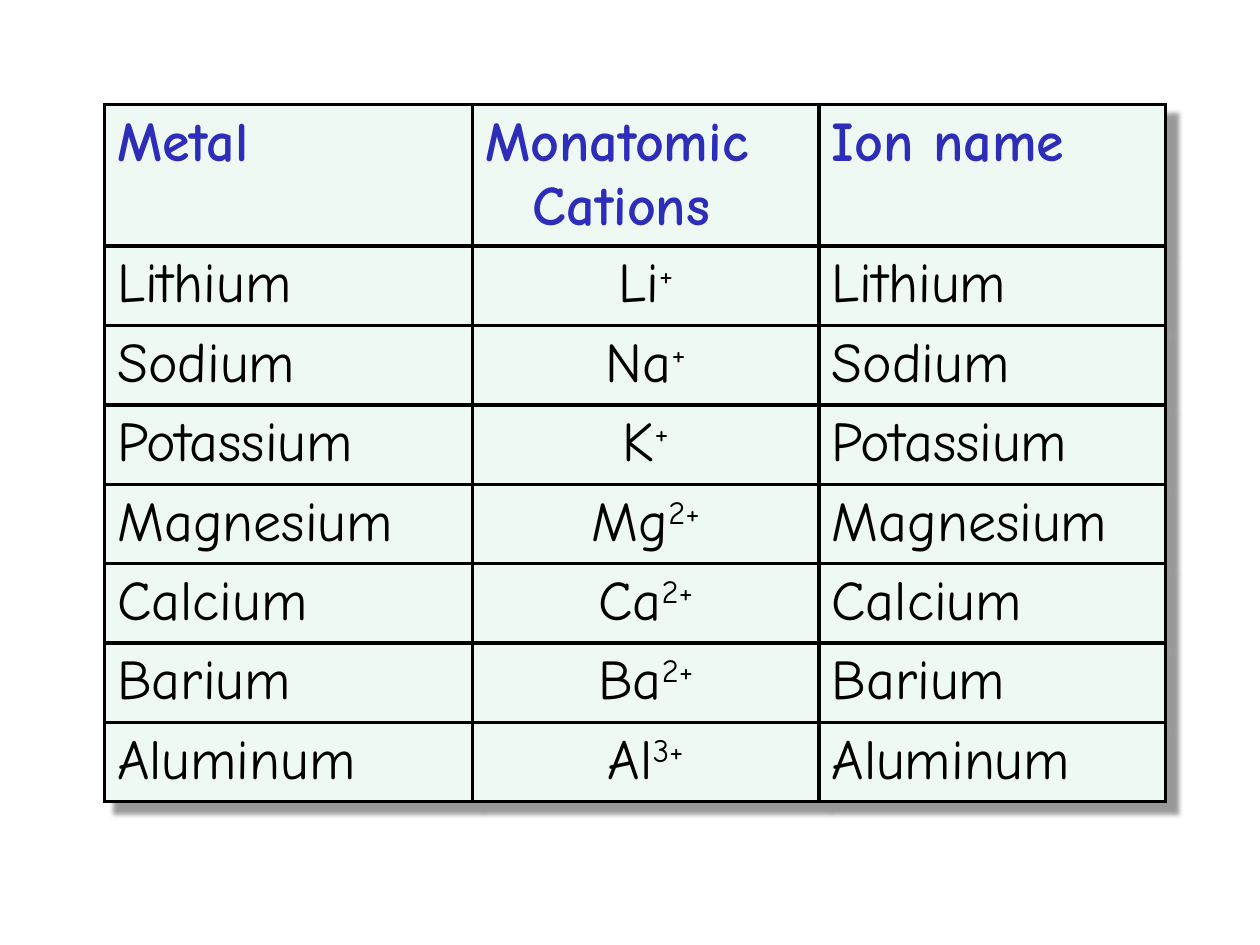
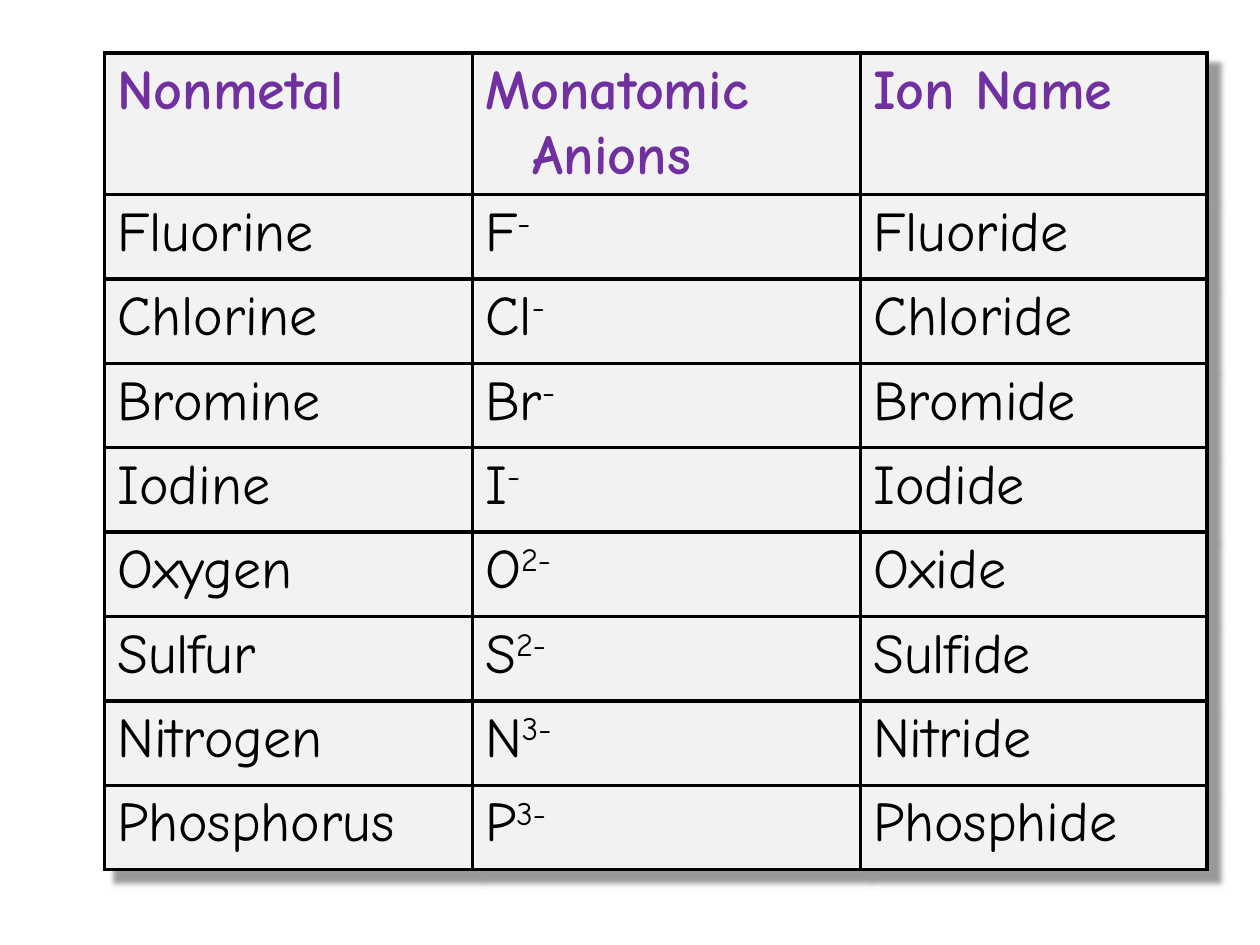
from dataclasses import dataclass

from lxml.etree import SubElement
from pptx import Presentation
from pptx.dml.color import RGBColor
from pptx.enum.text import PP_ALIGN
from pptx.oxml import parse_xml
from pptx.oxml.ns import nsdecls, qn
from pptx.util import Inches, Pt

SLIDES = [
    {
        "header": ("Metal", "Monatomic Cations", "Ion name"),
        "ions": [
            ("Lithium", "Li", "+", "Lithium"),
            ("Sodium", "Na", "+", "Sodium"),
            ("Potassium", "K", "+", "Potassium"),
            ("Magnesium", "Mg", "2+", "Magnesium"),
            ("Calcium", "Ca", "2+", "Calcium"),
            ("Barium", "Ba", "2+", "Barium"),
            ("Aluminum", "Al", "3+", "Aluminum"),
        ],
        "top": 0.83,
        "columns": (2.92, 2.75, 2.75),
        "row_height": 0.63,
        "ion_align": PP_ALIGN.CENTER,
        "header_color": "2D2DB9",
        "fill": "EEF9F4",
    },
    {
        "header": ("Nonmetal", "Monatomic Anions", "Ion Name"),
        "ions": [
            ("Fluorine", "F", "-", "Fluoride"),
            ("Chlorine", "Cl", "-", "Chloride"),
            ("Bromine", "Br", "-", "Bromide"),
            ("Iodine", "I", "-", "Iodide"),
            ("Oxygen", "O", "2-", "Oxide"),
            ("Sulfur", "S", "2-", "Sulfide"),
            ("Nitrogen", "N", "3-", "Nitride"),
            ("Phosphorus", "P", "3-", "Phosphide"),
        ],
        "top": 0.42,
        "columns": (2.92, 3.08, 2.75),
        "row_height": 0.67,
        "ion_align": PP_ALIGN.LEFT,
        "header_color": "7030A0",
        "fill": "F2F2F2",
    },
]


@dataclass(frozen=True)
class Theme:
    font: str = "Comic Neue"
    size: float = 32
    ink: str = "000000"
    border: float = 2.25
    left: float = 0.83
    header_height: float = 1.12
    indent: float = 0.38
    shadow_alpha: int = 40000
    shadow_blur: float = 0.04
    shadow_distance: float = 0.12


THEME = Theme()


def add_shadow(table):
    table._tbl.tblPr.insert(0, parse_xml(
        f'<a:effectLst {nsdecls("a")}>'
        f'<a:outerShdw blurRad="{Inches(THEME.shadow_blur)}" '
        f'dist="{Inches(THEME.shadow_distance)}" dir="2700000" '
        f'algn="tl" rotWithShape="0"><a:srgbClr val="{THEME.ink}">'
        f'<a:alpha val="{THEME.shadow_alpha}"/></a:srgbClr>'
        '</a:outerShdw></a:effectLst>'))


def style_cell(cell, fill):
    cell.fill.solid()
    cell.fill.fore_color.rgb = RGBColor.from_string(fill)
    tc_pr = cell._tc.get_or_add_tcPr()
    for i, side in enumerate(("lnL", "lnR", "lnT", "lnB")):
        ln = SubElement(tc_pr, qn(f"a:{side}"), w=str(Pt(THEME.border)))
        solid = SubElement(ln, qn("a:solidFill"))
        SubElement(solid, qn("a:srgbClr"), val=THEME.ink)
        tc_pr.insert(i, ln)


def write_cell(cell, parts, color, bold, align):
    p = cell.text_frame.paragraphs[0]
    p.alignment = align
    indent = Inches(THEME.indent)
    p_pr = p._p.get_or_add_pPr()
    for name, value in {"marL": indent, "indent": -indent}.items():
        p_pr.set(name, str(value))
    formats = {"name": THEME.font, "size": Pt(THEME.size), "bold": bold}
    for i, text in enumerate(parts):
        r = p.add_run()
        r.text = text
        for name, value in formats.items():
            setattr(r.font, name, value)
        r.font.color.rgb = RGBColor.from_string(color)
        if i:
            r._r.get_or_add_rPr().set("baseline", "30000")


def add_ion_table(slide, data):
    rows = [[(title,) for title in data["header"]]]
    rows += [[(element,), (symbol, charge), (ion,)]
             for element, symbol, charge, ion in data["ions"]]
    heights = [THEME.header_height] + [data["row_height"]] * len(data["ions"])
    table = slide.shapes.add_table(
        len(rows), len(data["columns"]), Inches(THEME.left), Inches(data["top"]),
        Inches(sum(data["columns"])), Inches(sum(heights))).table
    for flag in ("first_row", "horz_banding"):
        setattr(table, flag, False)
    add_shadow(table)
    for column, width in zip(table.columns, data["columns"]):
        column.width = Inches(width)
    for y, (row, height) in enumerate(zip(rows, heights)):
        table.rows[y].height = Inches(height)
        color = THEME.ink if y else data["header_color"]
        for x, parts in enumerate(row):
            align = data["ion_align"] if y and x == 1 else PP_ALIGN.LEFT
            cell = table.cell(y, x)
            style_cell(cell, data["fill"])
            write_cell(cell, parts, color, y == 0, align)


def main():
    prs = Presentation()
    prs.slide_width, prs.slide_height = Inches(10), Inches(7.5)
    for data in SLIDES:
        add_ion_table(prs.slides.add_slide(prs.slide_layouts[6]), data)
    prs.save("out.pptx")


if __name__ == "__main__":
    main()
